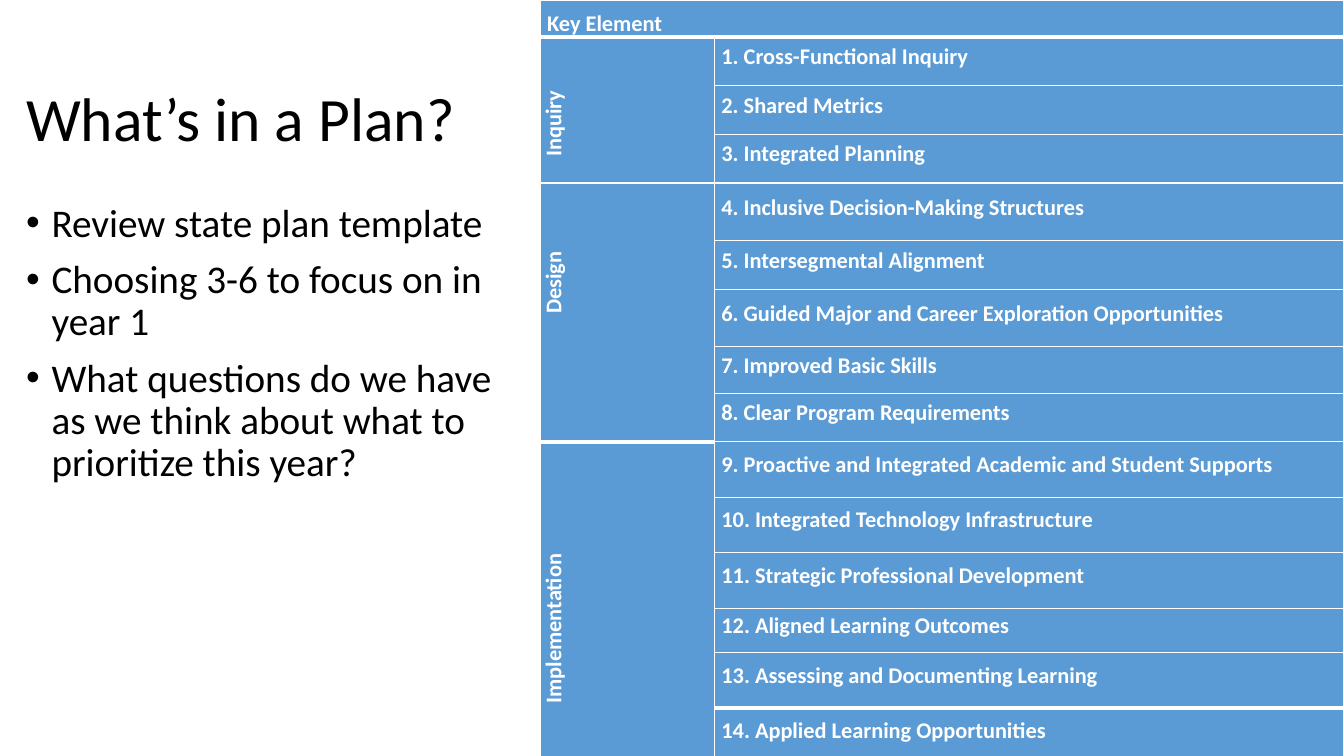
"""Build the slide that lists the key elements of a plan."""
import pptx
import pptx.dml.color
import pptx.enum.text
import pptx.oxml
import pptx.oxml.ns
import pptx.util

Cm, Pt = pptx.util.Cm, pptx.util.Pt
ALIGN = pptx.enum.text.PP_ALIGN
ANCHOR = pptx.enum.text.MSO_ANCHOR
FONT, BLACK, WHITE, BLUE = "Calibri", "000000", "FFFFFF", "5B9BD5"
HEADER_HEIGHT = 0.94
COLUMN_WIDTHS = (4.39, 15.85)
POINTS = [
    "Review state plan template",
    "Choosing 3-6 to focus on in year 1",
    "What questions do we have as we think about what to prioritize this year?",
]
SECTIONS = [
    ("Inquiry", 0.66, ALIGN.LEFT, [
        ("Cross-Functional Inquiry", 1.22),
        ("Shared Metrics", 1.22),
        ("Integrated Planning", 1.23),
    ]),
    ("Design", 1.5, ALIGN.CENTER, [
        ("Inclusive Decision-Making Structures", 1.45),
        ("Intersegmental Alignment", 1.23),
        ("Guided Major and Career Exploration Opportunities", 1.45),
        ("Improved Basic Skills", 1.17),
        ("Clear Program Requirements", 1.22),
    ]),
    ("Implementation", 1.52, ALIGN.LEFT, [
        ("Proactive and Integrated Academic and Student Supports", 1.4),
        ("Integrated Technology Infrastructure", 1.4),
        ("Strategic Professional Development", 1.4),
        ("Aligned Learning Outcomes", 1.12),
        ("Assessing and Documenting Learning", 1.4),
        ("Applied Learning Opportunities", 1.4),
    ]),
]


def color(value):
    """Return the colour for a hex string."""
    return pptx.dml.color.RGBColor.from_string(value)


def add_span(para, text, size, shade, bold=False):
    """Add one formatted run to a paragraph."""
    span = para.add_run()
    span.text = text
    span.font.name = FONT
    span.font.size = Pt(size)
    span.font.bold = bold
    span.font.color.rgb = color(shade)


def indent(para, left, first=0):
    """Set the left and first-line indents in centimetres."""
    settings = para._p.get_or_add_pPr()
    settings.set("marL", str(Cm(left)))
    settings.set("indent", str(Cm(first)))
    return settings


def add_text(page, left, top, width, height, lines, size, bulleted=False):
    """Add a text box with one paragraph for each line."""
    box = page.shapes.add_textbox(Cm(left), Cm(top), Cm(width), Cm(height))
    frame = box.text_frame
    frame.word_wrap = True
    frame.vertical_anchor = ANCHOR.TOP if bulleted else ANCHOR.MIDDLE
    for index, line in enumerate(lines):
        para = frame.add_paragraph() if index else frame.paragraphs[0]
        para.line_spacing = 0.9
        if bulleted:
            para.space_before = Pt(10)
            settings = indent(para, 0.64, -0.64)
            for tag, key, value in (("buFont", "typeface", "Arial"), ("buChar", "char", "•")):
                bullet = pptx.oxml.parse_xml(f'<a:{tag} {pptx.oxml.ns.nsdecls("a")} {key}="{value}"/>')
                settings.append(bullet)
        add_span(para, line, size, BLACK)


def style_cell(cell, top, bottom):
    """Give a cell its borders, fill and zero margins."""
    settings = cell._tc.get_or_add_tcPr()
    for side, width in (("L", 1), ("R", 1), ("T", top), ("B", bottom)):
        settings.append(pptx.oxml.parse_xml(
            f'<a:ln{side} {pptx.oxml.ns.nsdecls("a")} w="{Pt(width)}">'
            f'<a:solidFill><a:srgbClr val="{WHITE}"/></a:solidFill></a:ln{side}>'))
    cell.fill.solid()
    cell.fill.fore_color.rgb = color(BLUE)
    cell.margin_left = cell.margin_right = cell.margin_top = cell.margin_bottom = 0


def write_cell(cell, text, left, anchor=ANCHOR.MIDDLE):
    """Write bold white text in a cell and return its paragraph."""
    cell.vertical_anchor = anchor
    para = cell.text_frame.paragraphs[0]
    indent(para, left)
    add_span(para, text, 16, WHITE, bold=True)
    return para


def write_label(cell, text, left, align):
    """Write a section label that reads upwards."""
    cell._tc.get_or_add_tcPr().set("vert", "vert270")
    para = write_cell(cell, text, left)
    para.alignment = align
    para.space_before = Pt(5.2)


def add_elements(page):
    """Add the table of key elements grouped by section."""
    heights = [HEADER_HEIGHT] + [height for section in SECTIONS for _, height in section[3]]
    last = len(heights) - 1
    frame = page.shapes.add_table(
        len(heights), 2, Cm(13.61), Cm(0), Cm(sum(COLUMN_WIDTHS)), Cm(sum(heights)))
    table = frame.table
    table.first_row = table.horz_banding = False
    for column, width in zip(table.columns, COLUMN_WIDTHS):
        column.width = Cm(width)
    final_start = last - len(SECTIONS[-1][3]) + 1
    thick_tops = {(1, 0), (1, 1), (final_start, 0), (last, 1)}
    for row, height in enumerate(heights):
        table.rows[row].height = Cm(height)
        for column in range(2):
            top = 3 if (row, column) in thick_tops else 1
            bottom = 3 if (row + 1, column) in thick_tops else 1
            style_cell(table.cell(row, column), top, bottom)
    header = table.cell(0, 0)
    header.merge(table.cell(0, 1))
    write_cell(header, "Key Element", 0.18, ANCHOR.BOTTOM).line_spacing = Pt(13.4)
    number = 1
    for label, left, align, elements in SECTIONS:
        label_cell = table.cell(number, 0)
        label_cell.merge(table.cell(number + len(elements) - 1, 0))
        write_label(label_cell, label, left, align)
        for element, _ in elements:
            para = write_cell(table.cell(number, 1), f"{number}. {element}", 0.18)
            para.line_spacing = Pt(13.4 if number < 10 else 12.5)
            number += 1


def main():
    """Build and save the deck."""
    deck = pptx.Presentation()
    deck.slide_width, deck.slide_height = Cm(33.87), Cm(19.05)
    page = deck.slides.add_slide(deck.slide_layouts[6])
    add_text(page, 0.41, 1.22, 29.21, 3.68, ["What’s in a Plan?"], 44)
    add_text(page, 0.41, 5, 12.83, 12.09, POINTS, 28, bulleted=True)
    add_elements(page)
    deck.save("out.pptx")


if __name__ == "__main__":
    main()
